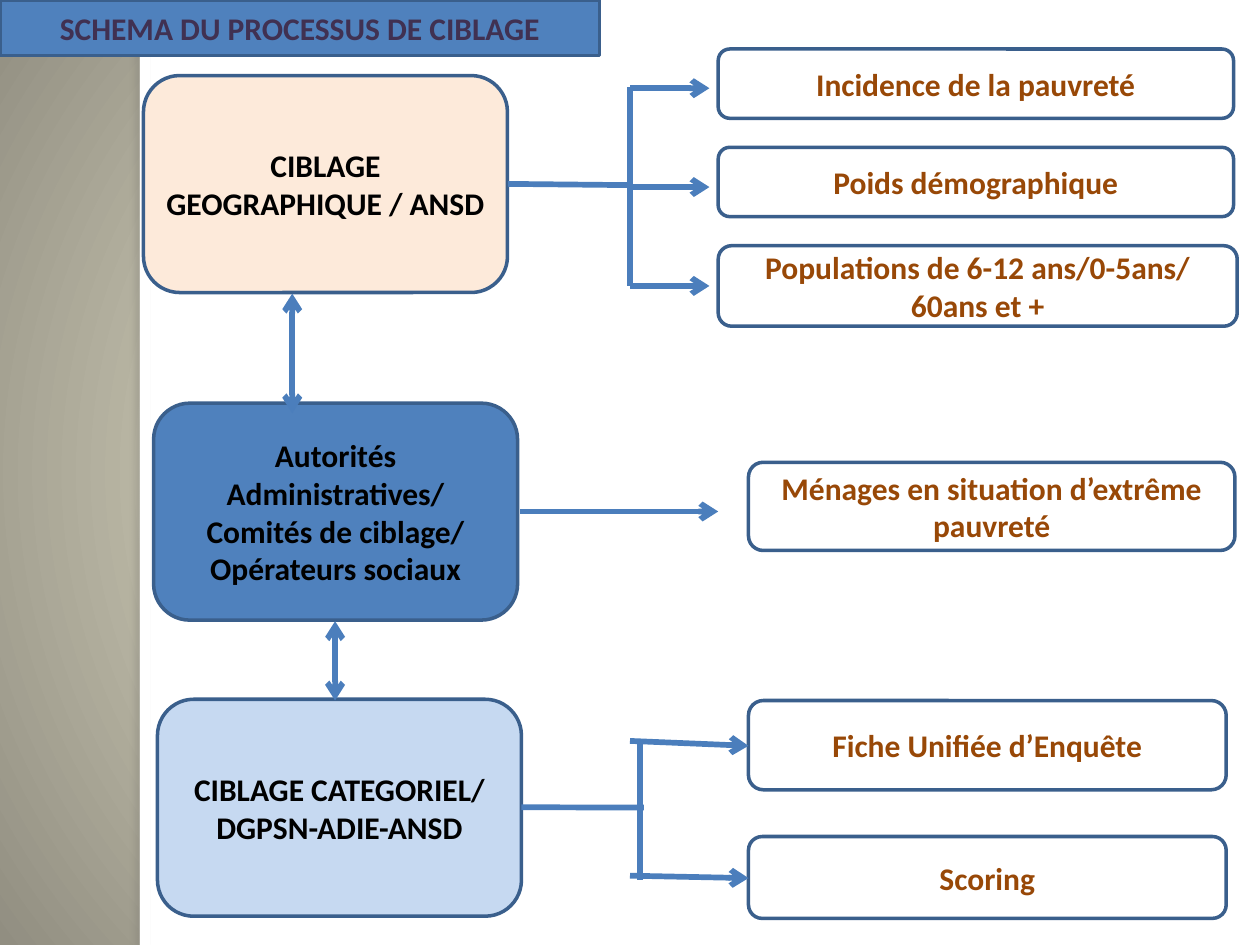
"""Build the targeting process diagram slide."""
from lxml.etree import SubElement
from pptx import Presentation
from pptx.dml.color import RGBColor
from pptx.enum.shapes import MSO_CONNECTOR, MSO_SHAPE
from pptx.enum.text import MSO_ANCHOR, MSO_AUTO_SIZE, PP_ALIGN
from pptx.oxml import parse_xml
from pptx.oxml.ns import nsdecls, qn
from pptx.util import Pt

COLORS = {
    "center": "FCF7DD", "edge": "918E81", "panel": "FFFFFF", "shadow": "77756F",
    "border": "3A5F8C", "arrow": "4B7EBC", "blue": "4F81BD", "peach": "FDEADA",
    "pale": "C6D9F1", "black": "000000", "brown": "984807", "title": "403152",
}
TITLE = "SCHEMA DU PROCESSUS DE CIBLAGE"
STAGE_SIZE = (208, 124)
STAGES = [
    (82, 43.2, "peach", "CIBLAGE GEOGRAPHIQUE / ANSD"),
    (87.8, 230.4, "blue",
     "Autorités Administratives/ Comités de ciblage/\nOpérateurs sociaux"),
    (90, 399.6, "pale", "CIBLAGE CATEGORIEL/ DGPSN-ADIE-ANSD"),
]
CRITERIA = [
    (410.4, 28, 294.5, 39.6, "Incidence de la pauvreté"),
    (410.4, 84.2, 294.5, 39.6, "Poids démographique"),
    (410.4, 140.4, 296.6, 46, "Populations de 6-12 ans/0-5ans/ 60ans et +"),
    (427.7, 264.2, 278, 50.4, "Ménages en situation d’extrême pauvreté"),
    (427.7, 400.3, 273, 51, "Fiche Unifiée d’Enquête"),
    (427.7, 478, 273, 46.8, "Scoring"),
]
FORK = 360
PLAIN_LINES = [
    (290.2, 105.1, FORK, 105.8),
    (FORK, 49.7, FORK, 163.4),
    (297.4, 292.3, FORK, 292.3),
    (298, 461.3, 368, 461.5),
    (365.8, 423.4, 365.8, 502.6),
]
ARROWS = [(FORK, 50.4 + 56.5 * i, 405.4, 50.4 + 56.5 * i) for i in range(3)] + [
    (FORK, 292.3, 410.4, 292.3),
    (FORK, 423.4, 427.7, 426.2),
    (FORK, 500.4, 427.7, 501.8),
]
DOUBLE_ARROWS = [(167, 167.8, 167, 236.2), (191.5, 355, 191.5, 400.3)]


def rgb(name):
    return RGBColor.from_string(COLORS[name])


def paint(sp, fill, border=None):
    if fill:
        sp.fill.solid()
        sp.fill.fore_color.rgb = rgb(fill)
    else:
        sp.fill.background()
    if border:
        sp.line.color.rgb = rgb(border)
        sp.line.width = Pt(2)
    else:
        sp.line.fill.background()


def write(sp, text, color):
    tf = sp.text_frame
    tf.text = text
    tf.word_wrap = True
    tf.auto_size = MSO_AUTO_SIZE.NONE
    tf.vertical_anchor = MSO_ANCHOR.MIDDLE
    for p in tf.paragraphs:
        p.alignment = PP_ALIGN.CENTER
        for r in p.runs:
            r.font.name = "Calibri"
            r.font.size = Pt(18)
            r.font.bold = True
            r.font.color.rgb = rgb(color)


def add_box(s, kind, x, y, w, h, fill, border=None):
    sp = s.shapes.add_shape(kind, Pt(x), Pt(y), Pt(w), Pt(h))
    sp.shadow.inherit = False
    paint(sp, fill, border)
    return sp


def add_line(s, points, ends=()):
    line = s.shapes.add_connector(MSO_CONNECTOR.STRAIGHT, *map(Pt, points))
    line.line.color.rgb = rgb("arrow")
    line.line.width = Pt(3.25)
    ln = line.line._get_or_add_ln()
    for end in ends:
        SubElement(ln, qn(f"a:{end}"), type="arrow")
    SubElement(line._element.spPr, qn("a:effectLst"))


def add_background(s):
    fill = s.background.fill
    fill.gradient()
    for stop, name in zip(fill.gradient_stops, ("center", "edge")):
        stop.color.rgb = rgb(name)
    lin = next(s.background._cSld.iter(qn("a:lin")))
    lin.getparent().replace(lin, parse_xml(
        f'<a:path {nsdecls("a")} path="circle">'
        '<a:fillToRect l="50000" t="50000" r="50000" b="50000"/></a:path>'))
    add_box(s, MSO_SHAPE.RECTANGLE, 80, 0, 640, 540, "panel")
    strip = add_box(s, MSO_SHAPE.RECTANGLE, 80, 0, 5.8, 540, "panel")
    effects = strip._element.spPr.find(qn("a:effectLst"))
    effects.append(parse_xml(
        f'<a:outerShdw {nsdecls("a")} blurRad="{Pt(3)}" dist="{Pt(3)}" dir="10800000">'
        f'<a:srgbClr val="{COLORS["shadow"]}"><a:alpha val="25000"/></a:srgbClr>'
        '</a:outerShdw>'))


def main():
    prs = Presentation()
    prs.slide_width, prs.slide_height = Pt(720), Pt(540)
    s = prs.slides.add_slide(prs.slide_layouts[5])
    add_background(s)
    for x, y, fill, text in STAGES:
        sp = add_box(s, MSO_SHAPE.ROUNDED_RECTANGLE, x, y, *STAGE_SIZE, fill, "border")
        write(sp, text, "black")
    for *place, text in CRITERIA:
        sp = add_box(s, MSO_SHAPE.ROUNDED_RECTANGLE, *place, None, "border")
        write(sp, text, "brown")
    for lines, ends in ((PLAIN_LINES, ()), (ARROWS, ("tailEnd",)),
                        (DOUBLE_ARROWS, ("headEnd", "tailEnd"))):
        for points in lines:
            add_line(s, points, ends)
    title = s.shapes.title
    title.left, title.top, title.width, title.height = map(Pt, (0, 0, 342.7, 31.7))
    paint(title, "blue", "border")
    write(title, TITLE, "title")
    s.shapes._spTree.append(title._element)
    prs.save("out.pptx")


if __name__ == "__main__":
    main()
